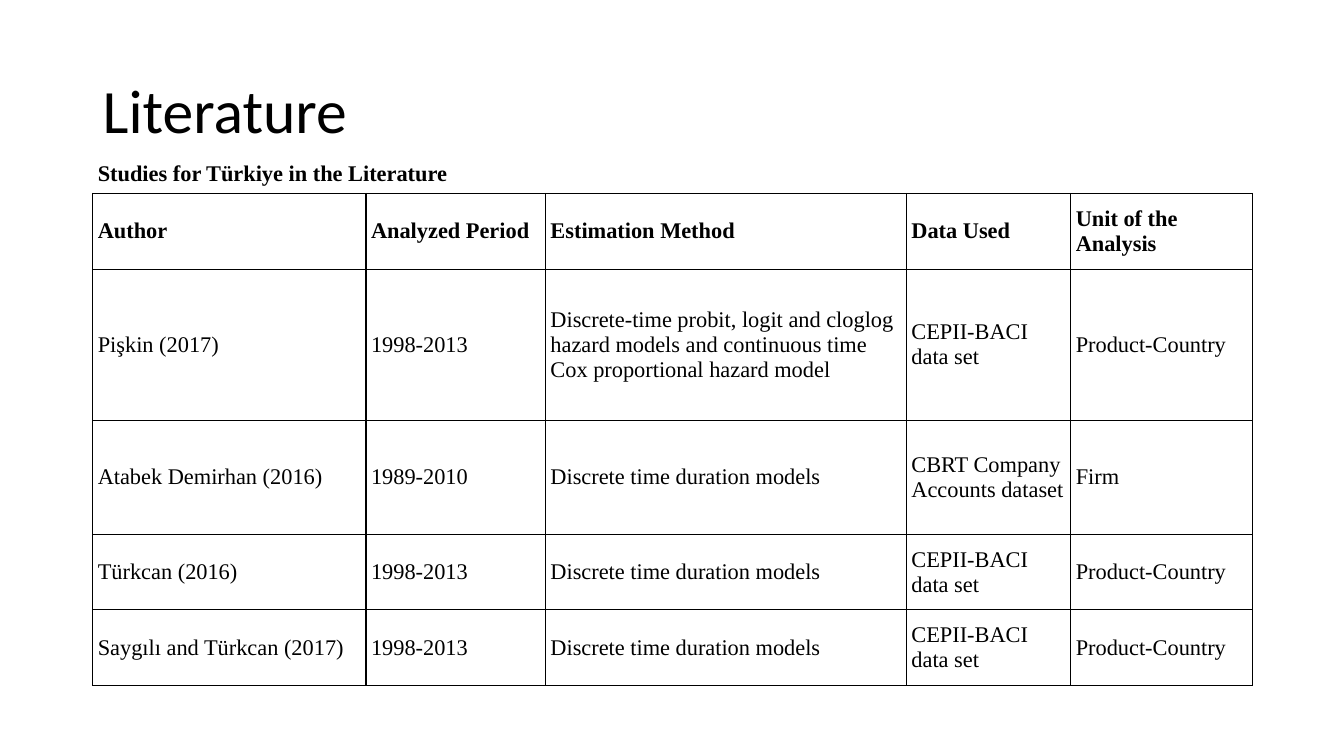
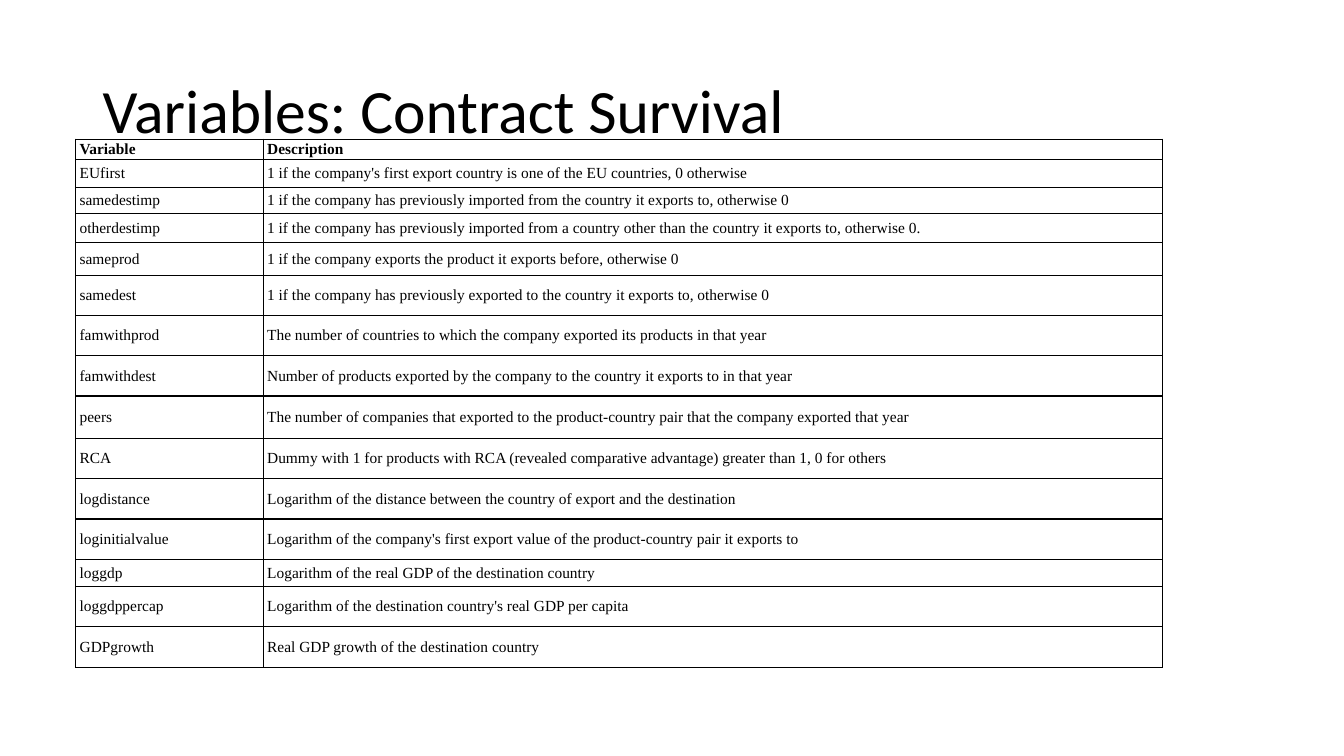
from lxml import etree
from pptx import Presentation
from pptx.dml.color import RGBColor
from pptx.enum.text import MSO_ANCHOR
from pptx.oxml.ns import qn
from pptx.util import Inches, Pt

MIDDLE = MSO_ANCHOR.MIDDLE


class Theme:
    ink = "000000"
    title_font = "Calibri"
    table_font = "Times New Roman"
    title_size = 44
    studies_size = 16
    variables_size = 11
    border_width = 1


def style_text(paragraph, font_name, size, bold=False):
    paragraph.font.name = font_name
    paragraph.font.size = Pt(size)
    paragraph.font.bold = bold
    paragraph.font.color.rgb = RGBColor.from_string(Theme.ink)


def set_borders(cell, visible_sides):
    properties = cell._tc.get_or_add_tcPr()
    for side in "LRTB":
        line = etree.SubElement(properties, qn(f"a:ln{side}"), w=str(Pt(Theme.border_width)))
        if side in visible_sides:
            fill = etree.SubElement(line, qn("a:solidFill"))
            etree.SubElement(fill, qn("a:srgbClr"), val=Theme.ink)
        else:
            etree.SubElement(line, qn("a:noFill"))


studies = [
    ("Author", "Analyzed Period", "Estimation Method", "Data Used", "Unit of the Analysis"),
    ("Pişkin (2017)", "1998-2013",
     "Discrete-time probit, logit and cloglog hazard models and continuous time Cox proportional hazard model",
     "CEPII-BACI data set", "Product-Country"),
    ("Atabek Demirhan (2016)", "1989-2010", "Discrete time duration models",
     "CBRT Company Accounts dataset", "Firm"),
    ("Türkcan (2016)", "1998-2013", "Discrete time duration models",
     "CEPII-BACI data set", "Product-Country"),
    ("Saygılı and Türkcan (2017)", "1998-2013", "Discrete time duration models",
     "CEPII-BACI data set", "Product-Country"),
]

variables = [
    ("Variable", "Description"),
    ("EUfirst", "1 if the company's first export country is one of the EU countries, 0 otherwise"),
    ("samedestimp", "1 if the company has previously imported from the country it exports to, otherwise 0"),
    ("otherdestimp",
     "1 if the company has previously imported from a country other than the country it exports to, otherwise 0."),
    ("sameprod", "1 if the company exports the product it exports before, otherwise 0"),
    ("samedest", "1 if the company has previously exported to the country it exports to, otherwise 0"),
    ("famwithprod", "The number of countries to which the company exported its products in that year"),
    ("famwithdest", "Number of products exported by the company to the country it exports to in that year"),
    ("peers", "The number of companies that exported to the product-country pair that the company exported that year"),
    ("RCA", "Dummy with 1 for products with RCA (revealed comparative advantage) greater than 1, 0 for others"),
    ("logdistance", "Logarithm of the distance between the country of export and the destination"),
    ("loginitialvalue", "Logarithm of the company's first export value of the product-country pair it exports to"),
    ("loggdp", "Logarithm of the real GDP of the destination country"),
    ("loggdppercap", "Logarithm of the destination country's real GDP per capita"),
    ("GDPgrowth", "Real GDP growth of the destination country"),
]

pages = [
    {
        "title": "Literature",
        "caption": "Studies for Türkiye in the Literature",
        "rows": studies,
        "left": 0.92, "top": 1.54,
        "widths": [2.71, 1.78, 3.58, 1.63, 1.8],
        "heights": [0.38, 0.75, 1.5, 1.13, 0.75, 0.75],
        "size": Theme.studies_size, "inset": 0.05,
    },
    {
        "title": "Variables: Contract Survival",
        "caption": "",
        "rows": variables,
        "left": 0.75, "top": 0.98,
        "widths": [1.86, 8.92],
        "heights": [0.4, 0.2, 0.28, 0.26, 0.29, 0.32, 0.4, 0.4,
                    0.4, 0.42, 0.4, 0.4, 0.4, 0.27, 0.4, 0.4],
        "size": Theme.variables_size, "inset": 0.04,
    },
]

deck = Presentation()
deck.slide_width = Inches(13.33)
deck.slide_height = Inches(7.5)

for page in pages:
    slide = deck.slides.add_slide(deck.slide_layouts[6])

    title = slide.shapes.add_textbox(Inches(0.92), Inches(0.4), Inches(11.5), Inches(1.45)).text_frame
    title.word_wrap = True
    title.vertical_anchor = MIDDLE
    title.text = page["title"]
    title.paragraphs[0].line_spacing = 0.9
    style_text(title.paragraphs[0], Theme.title_font, Theme.title_size)

    widths, heights = page["widths"], page["heights"]
    table = slide.shapes.add_table(
        len(heights), len(widths), Inches(page["left"]), Inches(page["top"]),
        Inches(sum(widths)), Inches(sum(heights))).table
    table.first_row = False
    table.horz_banding = False
    for column, width in zip(table.columns, widths):
        column.width = Inches(width)
    for row, height in zip(table.rows, heights):
        row.height = Inches(height)

    caption_row = [page["caption"]] + [""] * (len(widths) - 1)
    for row_index, texts in enumerate([caption_row, *page["rows"]]):
        for column_index, text in enumerate(texts):
            cell = table.cell(row_index, column_index)
            cell.text = text
            cell.vertical_anchor = MIDDLE
            cell.margin_left = cell.margin_right = Inches(page["inset"])
            cell.margin_top = cell.margin_bottom = 0
            style_text(cell.text_frame.paragraphs[0], Theme.table_font, page["size"], row_index < 2)
            set_borders(cell, "LRTB" if row_index else "B")
            cell.fill.background()
    table.cell(0, 0).merge(table.cell(0, len(widths) - 1))

deck.save("out.pptx")
